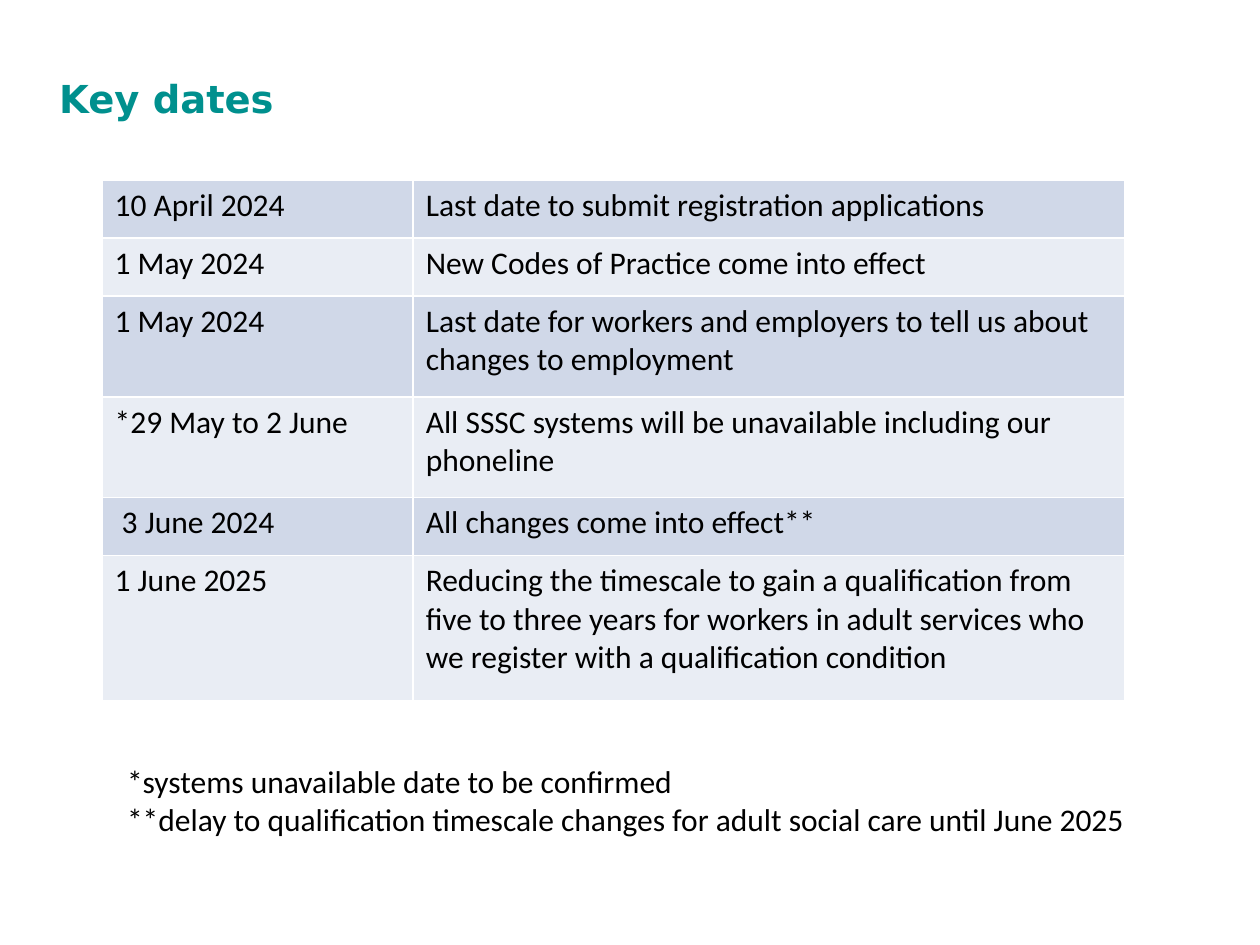
from lxml.etree import SubElement
from pptx import Presentation
from pptx.dml.color import RGBColor
from pptx.enum.text import MSO_ANCHOR, MSO_AUTO_SIZE, PP_ALIGN
from pptx.oxml.ns import qn
from pptx.util import Inches, Pt

TITLE = {"name": "DejaVu Sans", "size": Pt(22), "bold": True}
BODY = {"name": "Calibri", "size": Pt(18), "bold": False}
TEAL, BLACK, WHITE = "00908E", "000000", "FFFFFF"
BANDS = ["D0D8E8", "E9EDF4"]

COLUMN_WIDTHS = [2.47, 5.65]
KEY_DATES = [
    (0.46, "10 April 2024", "Last date to submit registration applications"),
    (0.46, "1 May 2024", "New Codes of Practice come into effect"),
    (0.8, "1 May 2024",
     "Last date for workers and employers to tell us about changes to employment"),
    (0.8, "*29 May to 2 June",
     "All SSSC systems will be unavailable including our phoneline"),
    (0.46, " 3 June 2024", "All changes come into effect**"),
    (1.15, "1 June 2025",
     "Reducing the timescale to gain a qualification from five to three years "
     "for workers in adult services who we register with a qualification condition"),
]
FOOTNOTES = [
    "*systems unavailable date to be confirmed",
    "**delay to qualification timescale changes for adult social care until June 2025",
]


def color(value):
    return RGBColor.from_string(value)


def write(frame, lines, font_format, font_color):
    frame.text = "\n".join(lines)
    for para in frame.paragraphs:
        para.alignment = PP_ALIGN.LEFT
        for span in para.runs:
            for name, value in font_format.items():
                setattr(span.font, name, value)
            span.font.color.rgb = color(font_color)


def set_borders(cell, value, width):
    properties = cell._tc.get_or_add_tcPr()
    for index, side in enumerate(("a:lnL", "a:lnR", "a:lnT", "a:lnB")):
        line = properties.makeelement(qn(side), {"w": str(Pt(width))})
        fill = SubElement(line, qn("a:solidFill"))
        SubElement(fill, qn("a:srgbClr"), val=value)
        properties.insert(index, line)


def add_title(page, left, top, width, height):
    title = page.shapes.title
    title.left, title.top = Inches(left), Inches(top)
    title.width, title.height = Inches(width), Inches(height)
    frame = title.text_frame
    frame.vertical_anchor = MSO_ANCHOR.MIDDLE
    frame.auto_size = MSO_AUTO_SIZE.SHAPE_TO_FIT_TEXT
    write(frame, ["Key dates"], TITLE, TEAL)


def add_dates_table(page, left, top, width, height):
    table = page.shapes.add_table(
        len(KEY_DATES), len(COLUMN_WIDTHS),
        Inches(left), Inches(top), Inches(width), Inches(height)).table
    table.first_row = False
    for column, column_width in zip(table.columns, COLUMN_WIDTHS):
        column.width = Inches(column_width)
    for index, (row_height, *texts) in enumerate(KEY_DATES):
        row = table.rows[index]
        row.height = Inches(row_height)
        for cell, text in zip(row.cells, texts):
            write(cell.text_frame, [text], BODY, BLACK)
            cell.fill.solid()
            cell.fill.fore_color.rgb = color(BANDS[index % 2])
            set_borders(cell, WHITE, 1)


def add_footnotes(page, left, top, width, height):
    box = page.shapes.add_textbox(
        Inches(left), Inches(top), Inches(width), Inches(height))
    frame = box.text_frame
    frame.word_wrap = False
    frame.auto_size = MSO_AUTO_SIZE.SHAPE_TO_FIT_TEXT
    write(frame, FOOTNOTES, BODY, BLACK)


def main():
    deck = Presentation()
    deck.slide_width, deck.slide_height = Inches(10), Inches(7.5)
    page = deck.slides.add_slide(deck.slide_layouts[5])  # title only
    add_title(page, 0.37, 0.54, 8.9, 0.47)
    add_dates_table(page, 0.81, 1.43, 8.12, 4.13)
    add_footnotes(page, 0.91, 6, 8.22, 0.71)
    deck.save("out.pptx")


if __name__ == "__main__":
    main()
